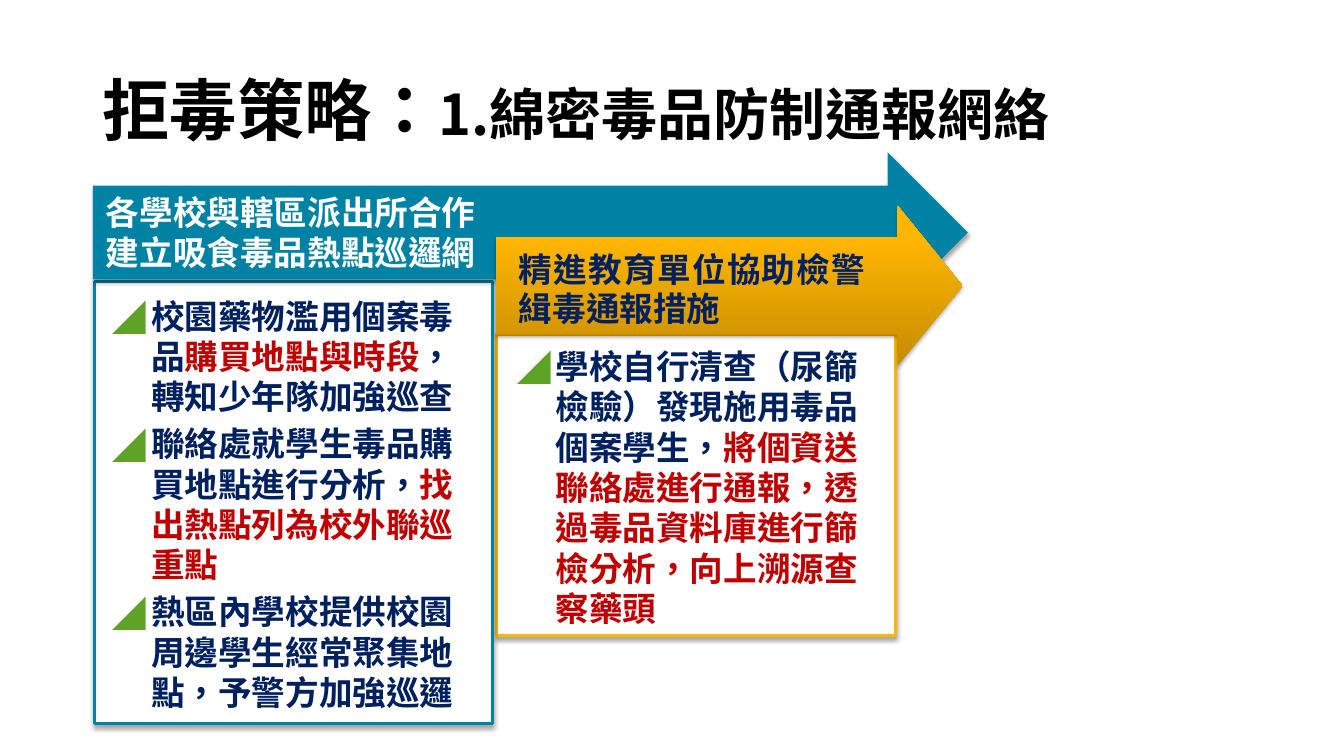
from copy import deepcopy
from dataclasses import dataclass

from lxml import etree
from pptx import Presentation
from pptx.dml.color import RGBColor
from pptx.enum.shapes import MSO_SHAPE
from pptx.enum.text import MSO_ANCHOR, PP_ALIGN
from pptx.oxml.ns import qn
from pptx.util import Cm, Pt

RECT, ARROW = MSO_SHAPE.RECTANGLE, MSO_SHAPE.RIGHT_ARROW
TOP, MIDDLE = MSO_ANCHOR.TOP, MSO_ANCHOR.MIDDLE
LEFT, JUST = PP_ALIGN.LEFT, PP_ALIGN.JUSTIFY

COLORS = {
    "white": "FFFFFF", "black": "000000", "teal": "0082A5", "gold": "FEB604",
    "navy": "002060", "red": "C00000", "green": "5FA326",
    "dark": "C58C00", "amber": "FFB601", "light": "FFB602",
}
CJK = "Noto Sans CJK SC"
INSETS = (0.25, 0.13, 0.25, 0.13)
Area = tuple[float, float, float, float]


@dataclass
class Block:
    kind: MSO_SHAPE
    area: Area
    fill: str | None = None  # None gives the gold gradient
    edge: str | None = None
    adjust: tuple = ()


@dataclass
class Run:
    text: str
    color: str = "navy"
    size: int = 24


@dataclass
class Label:
    area: Area
    paras: list[list[Run]]
    face: str = CJK
    anchor: MSO_ANCHOR = TOP
    align: PP_ALIGN = LEFT
    insets: Area = INSETS
    indent: float = 0
    pitch: float | Pt = Pt(28.8)
    bullet: bool = False


BLOCKS = [
    Block(RECT, (12.52, 8.43, 10.06, 7.59), "white", "gold"),
    Block(RECT, (2.39, 7.09, 10.03, 11.15), "white", "teal"),
    Block(ARROW, (2.34, 3.84, 22.05, 4.04), "teal", adjust=(0.585, 0.5)),
    Block(ARROW, (12.5, 5.18, 11.76, 4.04), adjust=(0.605, 0.406)),
]

LABELS = [
    Label((2.34, 1.02, 29.21, 3.68),
          [[Run("拒毒策略：", "black", 48), Run("1.綿密毒品防制通報網絡", "black", 40)]],
          anchor=MIDDLE, pitch=0.9),
    Label((2.39, 5.13, 11.58, 1.75),
          [[Run("各學校與轄區派出所合作", "white")], [Run("建立吸食毒品熱點巡邏網", "white")]],
          anchor=MIDDLE, align=JUST, insets=(0.18, 0.18, 0.71, 0.48), indent=0.1),
    Label((12.73, 6.17, 9.32, 2.26), [[Run("精進教育單位協助檢警緝毒通報措施")]],
          align=JUST, indent=0.1, pitch=Pt(28)),
    Label((2.59, 7.32, 9.58, 10.92), [
        [Run("校園藥物濫用個案毒品"), Run("購買地點與時段", "red"), Run("，轉知少年隊加強巡查")],
        [Run("聯絡處就學生毒品購買地點進行分析，"), Run("找出熱點列為校外聯巡重點", "red")],
        [Run("熱區內學校提供校園周邊學生經常聚集地點，予警方加強巡邏")],
    ], face="Arial", indent=0.97, bullet=True),
    Label((12.78, 8.59, 9.8, 7.44), [
        [Run("學校自行清查（尿篩檢驗）發現施用毒品個案學生，"),
         Run("將個資送聯絡處進行通報，透過毒品資料庫進行篩檢分析，向上溯源查察藥頭", "red")],
    ], face="Arial", indent=0.97, bullet=True),
]


def paint(name: str) -> RGBColor:
    return RGBColor.from_string(COLORS[name])


def apply(target, values: dict) -> None:
    for key, value in values.items():
        setattr(target, key, value)


def add_node(owner, tag: str, **attrs: str):
    return etree.SubElement(owner, qn(tag), attrs)


def add_shade(shape) -> None:
    shape.shadow.inherit = False
    effects = shape._element.spPr.find(qn("a:effectLst"))
    shade = add_node(effects, "a:outerShdw", blurRad=str(Pt(3.1)), dist=str(Pt(1.8)),
                     dir="5400000", algn="t", rotWithShape="0")
    color = add_node(shade, "a:srgbClr", val=COLORS["black"])
    add_node(color, "a:alpha", val="35000")


def add_blend(shape) -> None:
    shape.fill.gradient()
    shape.fill.gradient_angle = 90
    stops = shape._element.spPr.find(".//" + qn("a:gsLst"))
    stops.append(deepcopy(stops[-1]))
    points = ((0, "dark"), (0.8, "amber"), (1, "light"))
    for stop, (place, name) in zip(shape.fill.gradient_stops, points):
        stop.position = place
        stop.color.rgb = paint(name)


def draw_block(slide, block: Block) -> None:
    shape = slide.shapes.add_shape(block.kind, *map(Cm, block.area))
    for spot, value in enumerate(block.adjust):
        shape.adjustments[spot] = value
    if block.fill:
        shape.fill.solid()
        shape.fill.fore_color.rgb = paint(block.fill)
    else:
        add_blend(shape)
    if block.edge:
        shape.line.color.rgb = paint(block.edge)
        shape.line.width = Pt(2.25)
    else:
        shape.line.fill.background()
    add_shade(shape)


def draw_label(slide, label: Label) -> None:
    frame = slide.shapes.add_textbox(*map(Cm, label.area)).text_frame
    sides = ("margin_left", "margin_top", "margin_right", "margin_bottom")
    apply(frame, {"word_wrap": True, "vertical_anchor": label.anchor,
                  **dict(zip(sides, map(Cm, label.insets)))})
    for count, runs in enumerate(label.paras):
        para = frame.add_paragraph() if count else frame.paragraphs[0]
        apply(para, {"alignment": label.align, "line_spacing": label.pitch})
        props = para._p.get_or_add_pPr()
        props.set("marL", str(Cm(label.indent)))
        if label.bullet:
            if count:
                para.space_before = Pt(4.8)
            props.set("indent", str(-Cm(label.indent)))
            tint = add_node(props, "a:buClr")
            add_node(tint, "a:srgbClr", val=COLORS["green"])
            add_node(props, "a:buFont", typeface=CJK)
            add_node(props, "a:buChar", char="◢")
        for item in runs:
            run = para.add_run()
            run.text = item.text
            apply(run.font, {"name": label.face, "size": Pt(item.size), "bold": True})
            run.font.color.rgb = paint(item.color)
            style = run._r.get_or_add_rPr()
            style.set("lang", "zh-TW")
            add_node(style, "a:ea", typeface=CJK)


def main() -> None:
    deck = Presentation()
    apply(deck, {"slide_width": Cm(33.87), "slide_height": Cm(19.05)})
    slide = deck.slides.add_slide(deck.slide_layouts[6])

    # Title, then the arrows and panels, each with its text above it
    title, *texts = LABELS
    draw_label(slide, title)
    for block in BLOCKS[:3]:
        draw_block(slide, block)
    draw_label(slide, texts[0])
    draw_block(slide, BLOCKS[3])
    for label in texts[1:]:
        draw_label(slide, label)

    deck.save("out.pptx")


if __name__ == "__main__":
    main()
